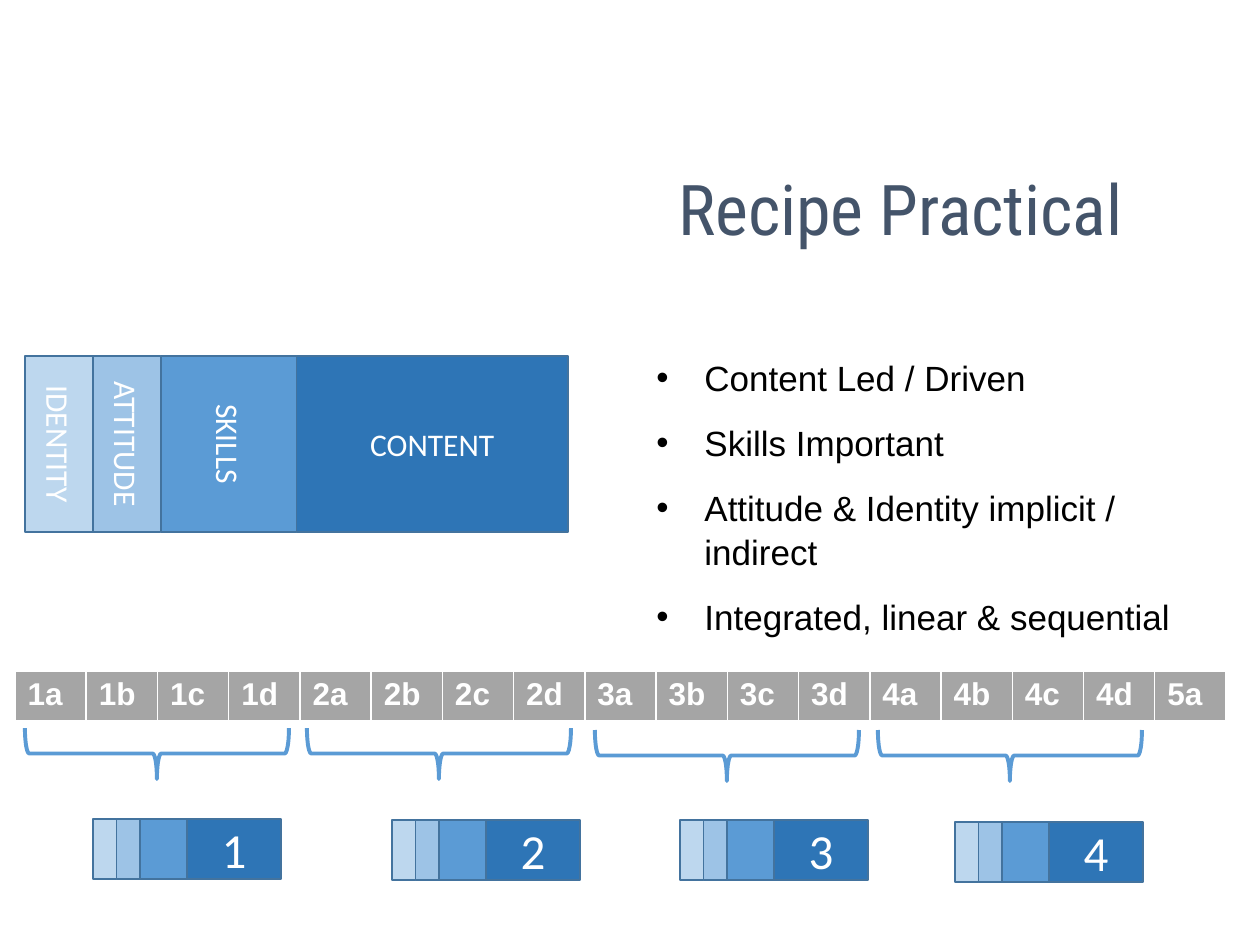
from dataclasses import dataclass

from lxml.etree import SubElement
from pptx import Presentation
from pptx.dml.color import RGBColor
from pptx.enum.shapes import MSO_SHAPE as Shape
from pptx.enum.text import MSO_ANCHOR as Anchor, PP_ALIGN as Align
from pptx.oxml.ns import qn
from pptx.util import Pt

EMU_PER_PX = 914400 / 126


@dataclass(frozen=True)
class Theme:
    bands: tuple = ("BDD7EE", "9DC3E6", "5B9BD5", "2E75B6")
    outline: str = "43739E"
    brace: str = "5B9BD5"
    title: str = "44546A"
    body: str = "000000"
    white: str = "FFFFFF"
    cell: str = "A5A5A5"
    title_font: str = "Roboto Condensed"
    body_font: str = "Arial"
    label_font: str = "Calibri"
    title_size: int = 40
    number_size: int = 28
    bullet_size: int = 20
    label_size: int = 18
    line_spacing: float = 1.05


THEME = Theme()
BAND_SHARES = (1, 1, 2, 4)  # identity, attitude, skills, content


def px(length):
    return round(length * EMU_PER_PX)


def box_emu(box):
    return [px(length) for length in box]


def set_font(paragraph, name, size, color, bold=False):
    font = paragraph.font
    font.name, font.size, font.bold = name, Pt(size), bold
    font.color.rgb = RGBColor.from_string(color)


def add_title(slide, box, text):
    frame = slide.shapes.add_textbox(*box_emu(box)).text_frame
    frame.word_wrap = True
    paragraph = frame.paragraphs[0]
    paragraph.text = text
    paragraph.alignment = Align.CENTER
    paragraph.line_spacing = THEME.line_spacing
    set_font(paragraph, THEME.title_font, THEME.title_size, THEME.title)


def add_bullets(slide, box, lines):
    frame = slide.shapes.add_textbox(*box_emu(box)).text_frame
    frame.word_wrap = True
    for index, line in enumerate(lines):
        paragraph = frame.add_paragraph() if index else frame.paragraphs[0]
        paragraph.text = line
        paragraph.line_spacing = THEME.line_spacing
        paragraph.space_after = Pt(12)
        properties = paragraph._p.get_or_add_pPr()
        properties.set("marL", str(px(111)))
        properties.set("indent", str(px(-48)))
        SubElement(properties, qn("a:buFont")).set("typeface", THEME.body_font)
        SubElement(properties, qn("a:buChar")).set("char", "•")
        set_font(paragraph, THEME.body_font, THEME.bullet_size, THEME.body)


def add_band_bar(slide, box, labels, size):
    """Four grouped bands; labels in all but the widest run downwards."""
    left, top, width, height = box
    group = slide.shapes.add_group_shape()
    unit = width / sum(BAND_SHARES)
    for share, color, label in zip(BAND_SHARES, THEME.bands, labels):
        band = group.shapes.add_shape(
            Shape.RECTANGLE, *box_emu((left, top, share * unit, height)))
        left += share * unit
        band.shadow.inherit = False
        band.fill.solid()
        band.fill.fore_color.rgb = RGBColor.from_string(color)
        band.line.color.rgb = RGBColor.from_string(THEME.outline)
        band.line.width = Pt(1)
        if not label:
            continue
        frame = band.text_frame
        frame.vertical_anchor = Anchor.MIDDLE
        if share < max(BAND_SHARES):
            frame._txBody.bodyPr.set("vert", "vert")
        paragraph = frame.paragraphs[0]
        paragraph.text = label
        paragraph.alignment = Align.CENTER
        set_font(paragraph, THEME.label_font, size, THEME.white)


def set_borders(cell):
    properties = cell._tc.get_or_add_tcPr()
    for position, (side, width) in enumerate(
            (("lnL", 1), ("lnR", 1), ("lnT", 1), ("lnB", 3))):
        line = SubElement(properties, qn(f"a:{side}"))
        line.set("w", str(Pt(width)))
        fill = SubElement(line, qn("a:solidFill"))
        SubElement(fill, qn("a:srgbClr")).set("val", THEME.white)
        properties.insert(position, line)  # borders precede the fill


def add_timeline(slide, box, labels):
    table = slide.shapes.add_table(1, len(labels), *box_emu(box)).table
    for column, label in enumerate(labels):
        table.columns[column].width = px(box[2] / len(labels))
        cell = table.cell(0, column)
        cell.fill.solid()
        cell.fill.fore_color.rgb = RGBColor.from_string(THEME.cell)
        set_borders(cell)
        paragraph = cell.text_frame.paragraphs[0]
        paragraph.text = label
        set_font(paragraph, THEME.body_font, THEME.label_size, THEME.white, True)


def add_brace(slide, box):
    """Brace spanning the box, with its point at the bottom."""
    left, top, width, height = box
    shift = (width - height) / 2  # the upright shape turns about its centre
    brace = slide.shapes.add_shape(
        Shape.LEFT_BRACE, *box_emu((left + shift, top - shift, height, width)))
    brace.rotation = 270
    brace.shadow.inherit = False
    brace.fill.background()
    brace.line.color.rgb = RGBColor.from_string(THEME.brace)
    brace.line.width = Pt(2.25)


def main():
    presentation = Presentation()
    presentation.slide_width, presentation.slide_height = px(1260), px(945)
    slide = presentation.slides.add_slide(presentation.slide_layouts[6])

    # Curriculum model and its description
    add_band_bar(slide, (25, 356, 543, 176),
                 ("IDENTITY", "ATTITUDE", "SKILLS", "CONTENT"), THEME.label_size)
    add_title(slide, (524, 155, 753, 158), "Recipe Practical")
    add_bullets(slide, (581, 348, 664, 246), (
        "Content Led / Driven",
        "Skills Important",
        "Attitude & Identity implicit / indirect",
        "Integrated, linear & sequential",
    ))

    # Lesson sequence
    lessons = [f"{unit}{part}" for unit in range(1, 5) for part in "abcd"]
    add_timeline(slide, (15, 671, 1211, 51), lessons + ["5a"])

    # One brace and one small bar for each unit
    units = (((25, 728), (93, 819)), ((307, 728), (392, 820)),
             ((595, 730), (680, 820)), ((878, 730), (955, 822)))
    for number, (brace_corner, bar_corner) in enumerate(units, start=1):
        add_brace(slide, (*brace_corner, 264, 51))
        add_band_bar(slide, (*bar_corner, 188, 60),
                     ("", "", "", str(number)), THEME.number_size)

    presentation.save("out.pptx")


if __name__ == "__main__":
    main()
